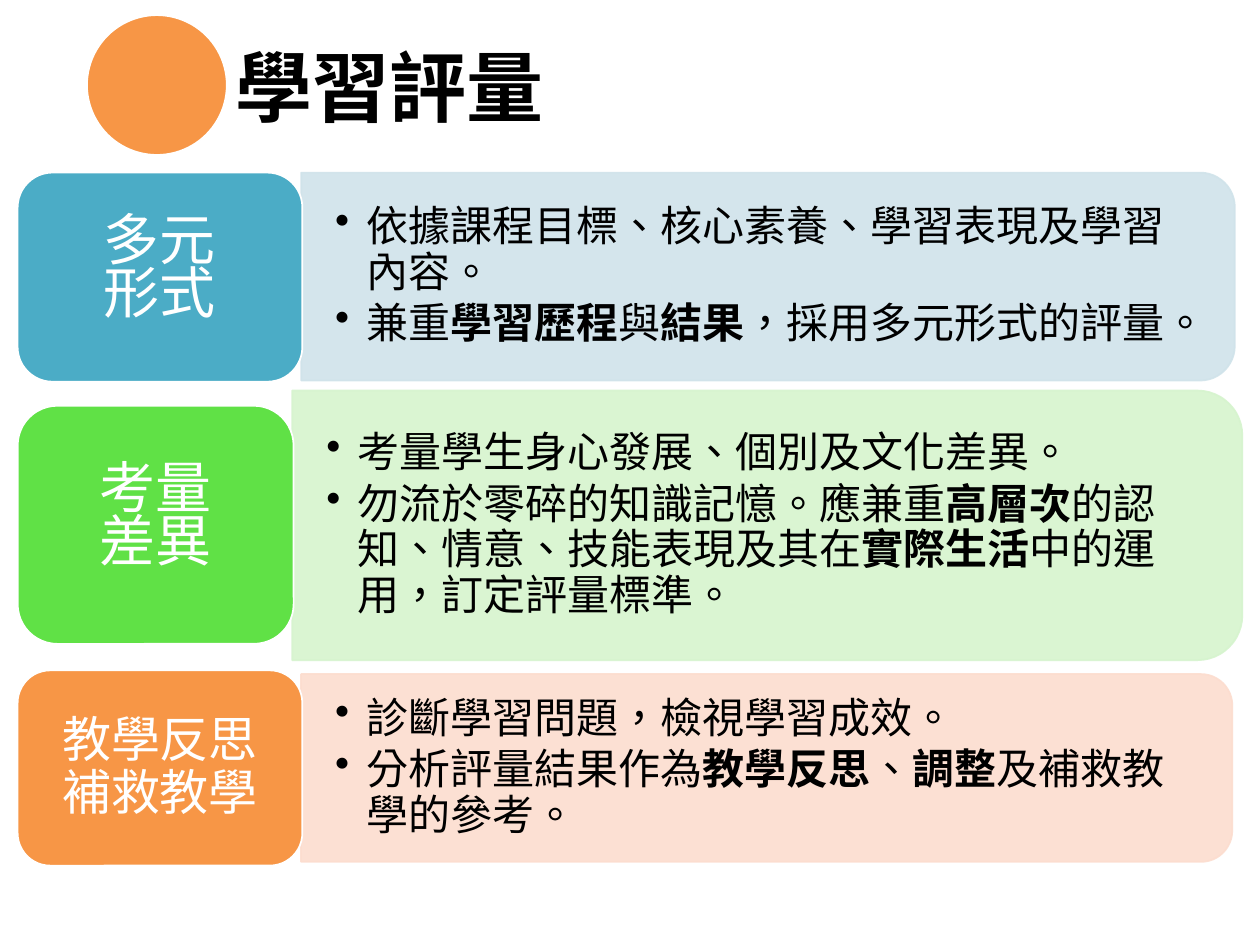
from dataclasses import dataclass

from lxml.etree import SubElement
from pptx import Presentation
from pptx.dml.color import RGBColor
from pptx.enum.lang import MSO_LANGUAGE_ID
from pptx.enum.shapes import MSO_SHAPE
from pptx.enum.text import MSO_ANCHOR, PP_ALIGN
from pptx.oxml.ns import qn
from pptx.util import Inches, Pt

BLACK = RGBColor(0x00, 0x00, 0x00)
WHITE = RGBColor(0xFF, 0xFF, 0xFF)
TEAL = RGBColor(0x4B, 0xAC, 0xC6)
GREEN = RGBColor(0x60, 0xE1, 0x46)
ORANGE = RGBColor(0xF7, 0x96, 0x46)
PALE_TEAL = RGBColor(0xD0, 0xE3, 0xEA)
PALE_GREEN = RGBColor(0xD6, 0xF4, 0xCE)
PALE_ORANGE = RGBColor(0xFC, 0xDD, 0xCF)

SERIF, SANS = "Times New Roman", "Noto Sans CJK SC"
COLUMNS, ROWS = 100, 75  # square grid cells on a 4:3 slide
CORNER_RIM = 0.0488  # text inset of a rounded corner, as a share of height


@dataclass(frozen=True)
class Area:
    """A rectangle in grid columns and rows."""
    left: float
    top: float
    width: float
    height: float


@dataclass(frozen=True)
class Topic:
    label: tuple[str, ...]  # one entry per line
    one_paragraph: bool
    label_size: int
    label_spacing: float
    label_area: Area
    label_color: RGBColor
    panel_area: Area
    panel_color: RGBColor
    points: tuple[str, ...]  # *...* marks bold words


TOPICS = (
    Topic(("多元", "形式"), False, 32, 0.5,
          Area(1.4, 13.7, 22.6, 16.6), TEAL, Area(23.9, 13.7, 74.1, 16.5), PALE_TEAL,
          ("依據課程目標、核心素養、學習表現及學習內容。",
           "兼重*學習歷程*與*結果*，採用多元形式的評量。")),
    Topic(("考量", "差異"), False, 32, 0.5,
          Area(1.4, 32.2, 21.9, 18.9), GREEN, Area(23.2, 31, 75.4, 21.4), PALE_GREEN,
          ("考量學生身心發展、個別及文化差異。",
           "勿流於零碎的知識記憶。應兼重*高層次*的認知、情意、技能表現及其在"
           "*實際生活*中的運用，訂定評量標準。")),
    Topic(("教學反思", "補救教學"), True, 28, 0.9,
          Area(1.4, 53.2, 22.6, 15.5), ORANGE, Area(23.9, 53.5, 73.9, 14.9), PALE_ORANGE,
          ("診斷學習問題，檢視學習成效。",
           "分析評量結果作為*教學反思*、*調整*及補救教學的參考。")),
)

deck = Presentation()
deck.slide_width, deck.slide_height = Inches(10), Inches(7.5)
page = deck.slides.add_slide(deck.slide_layouts[6])


def place(area: Area) -> tuple[int, int, int, int]:
    column, row = deck.slide_width / COLUMNS, deck.slide_height / ROWS
    return (round(area.left * column), round(area.top * row),
            round(area.width * column), round(area.height * row))


def set_all(target, values: dict) -> None:
    for name, value in values.items():
        setattr(target, name, value)


def add_figure(kind, area: Area, fill: RGBColor, line: RGBColor, opacity: int = 100):
    figure = page.shapes.add_shape(kind, *place(area))
    figure.shadow.inherit = False
    figure.fill.solid()
    figure.fill.fore_color.rgb = fill
    figure.line.color.rgb = line
    figure.line.width = Pt(1)
    if opacity < 100:
        for color in figure.element.spPr.iter(qn("a:srgbClr")):
            SubElement(color, qn("a:alpha"), val=str(opacity * 1000))
    return figure


def add_frame(area: Area, side: float, edge: float):
    frame = page.shapes.add_textbox(*place(area)).text_frame
    set_all(frame, {
        "word_wrap": True, "vertical_anchor": MSO_ANCHOR.MIDDLE,
        "margin_left": Inches(side), "margin_right": Inches(side),
        "margin_top": Inches(edge), "margin_bottom": Inches(edge),
    })
    return frame


def add_para(frame, index: int, values: dict):
    para = frame.paragraphs[0] if index == 0 else frame.add_paragraph()
    set_all(para, values)
    return para


def add_span(para, text: str, name: str, size: int, color: RGBColor, bold: bool = False) -> None:
    span = para.add_run()
    span.text = text
    set_all(span.font, {"name": name, "size": Pt(size), "bold": bold,
                        "language_id": MSO_LANGUAGE_ID.TRADITIONAL_CHINESE})
    span.font.color.rgb = color


def add_bullet(para) -> None:
    properties = para._p.get_or_add_pPr()
    properties.set("marL", str(Inches(0.25)))
    properties.set("indent", str(-Inches(0.25)))
    SubElement(properties, qn("a:buChar"), char="•")


def draw_panel(topic: Topic) -> None:
    area = topic.panel_area
    # The shape is upright and turned a quarter, so its round end faces right
    upright = Area(area.left + (area.width - area.height) / 2,
                   area.top - (area.width - area.height) / 2, area.height, area.width)
    panel = add_figure(MSO_SHAPE.ROUND_2_SAME_RECTANGLE, upright,
                       topic.panel_color, topic.panel_color, 90)
    panel.rotation = 90

    rim = area.height * CORNER_RIM
    frame = add_frame(Area(area.left, area.top + rim, area.width - rim,
                           area.height - 2 * rim), 0.27, 0.14)
    for index, point in enumerate(topic.points):
        para = add_para(frame, index, {"level": 1, "line_spacing": 0.9,
                                       "space_after": Pt(3.6)})
        add_bullet(para)
        for number, text in enumerate(point.split("*")):
            add_span(para, text, SERIF, 24, BLACK, bold=number % 2 == 1)


def draw_label(topic: Topic) -> None:
    area = topic.label_area
    add_figure(MSO_SHAPE.ROUNDED_RECTANGLE, area, topic.label_color, WHITE)
    rim = area.height * CORNER_RIM
    frame = add_frame(Area(area.left + rim, area.top + rim, area.width - 2 * rim,
                           area.height - 2 * rim), 0.13, 0.07)
    values = {"alignment": PP_ALIGN.CENTER, "line_spacing": topic.label_spacing,
              "space_after": Pt(topic.label_size * 0.35)}
    for index, text in enumerate(topic.label):
        if index and topic.one_paragraph:
            para.add_line_break()
        else:
            para = add_para(frame, index, values)
        add_span(para, text, SANS, topic.label_size, WHITE)


# Title
title = add_frame(Area(17.7, 0, 28.5, 14.5), 0.1, 0.05)
add_span(add_para(title, 0, {"line_spacing": 0.9}), "學習評量", SERIF, 44, BLACK, bold=True)

# Topic rows
for topic in TOPICS:
    draw_panel(topic)
    draw_label(topic)

# Circle beside the title
add_figure(MSO_SHAPE.OVAL, Area(6.9, 1.2, 11.1, 11.1), ORANGE, WHITE)

deck.save("out.pptx")
